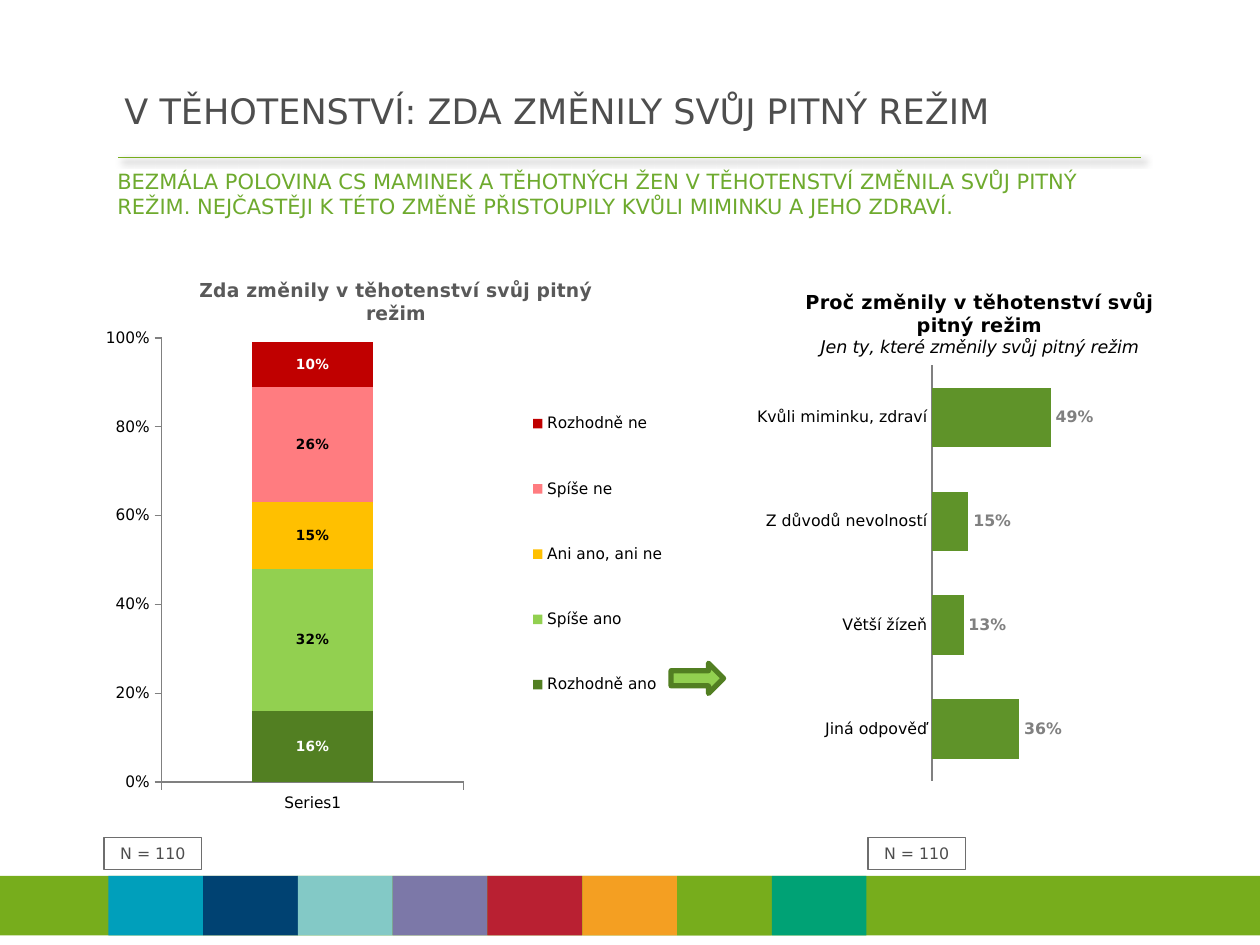
from lxml.etree import SubElement
from pptx import Presentation
from pptx.chart.data import CategoryChartData
from pptx.dml.color import RGBColor
from pptx.enum.chart import XL_CHART_TYPE, XL_LABEL_POSITION, XL_LEGEND_POSITION, XL_TICK_MARK
from pptx.enum.shapes import MSO_CONNECTOR, MSO_SHAPE
from pptx.enum.text import MSO_ANCHOR, PP_ALIGN
from pptx.oxml import parse_xml
from pptx.oxml.ns import nsdecls, qn
from pptx.util import Pt

FACE = "DejaVu Sans"
WHITE = RGBColor(0xFF, 0xFF, 0xFF)
BLACK = RGBColor(0, 0, 0)
INK = RGBColor(0x4E, 0x4E, 0x4E)
FRAME = RGBColor(0x6E, 0x6E, 0x6E)
HEAD = RGBColor(0x59, 0x59, 0x59)
GREY = RGBColor(0x80, 0x80, 0x80)
GREEN = RGBColor(0x77, 0xAD, 0x1C)
LEAF = RGBColor(0x6E, 0xAA, 0x2E)
MOSS = RGBColor(0x5F, 0x93, 0x29)
DARK = RGBColor(0x52, 0x7F, 0x22)
LIME = RGBColor(0x92, 0xD0, 0x50)
GOLD = RGBColor(0xFF, 0xC0, 0x00)
PINK = RGBColor(0xFF, 0x7C, 0x80)
RED = RGBColor(0xC0, 0x00, 0x00)
STRIPES = [
    RGBColor(0x00, 0x9F, 0xBB), RGBColor(0x00, 0x42, 0x72), RGBColor(0x83, 0xC9, 0xC6),
    RGBColor(0x7C, 0x78, 0xA8), RGBColor(0xB9, 0x20, 0x32), RGBColor(0xF4, 0x9F, 0x22),
    GREEN, RGBColor(0x00, 0xA2, 0x75),
]
SHARES = [
    ("Rozhodně ano", 0.16, DARK, WHITE),
    ("Spíše ano", 0.32, LIME, BLACK),
    ("Ani ano, ani ne", 0.15, GOLD, BLACK),
    ("Spíše ne", 0.26, PINK, BLACK),
    ("Rozhodně ne", 0.1, RED, WHITE),
]
CAUSES = {
    "Kvůli miminku, zdraví": 0.49, "Z důvodů nevolností": 0.15,
    "Větší žízeň": 0.13, "Jiná odpověď": 0.36,
}


def apply(item, **values):
    """Set every given value on the item."""
    for name, value in values.items():
        setattr(item, name, value)


def style(font, size, color, **more):
    """Give a font its face, size, colour and further traits."""
    apply(font, name=FACE, size=Pt(size), **more)
    font.color.rgb = color


def points(box):
    """Turn a box of numbers into point lengths."""
    return [Pt(n) for n in box]


def block(slide, kind, box, fill=None, line=None, width=0.75):
    """Add a flat preset shape."""
    shape = slide.shapes.add_shape(kind, *points(box))
    shape.shadow.inherit = False
    for part, color in ((shape.fill, fill), (shape.line.fill, line)):
        if color is None:
            part.background()
        else:
            part.solid()
            part.fore_color.rgb = color
    if line is not None:
        shape.line.width = Pt(width)
    return shape


def words(slide, box, text, size, color, anchor):
    """Add a wrapped text box."""
    frame = slide.shapes.add_textbox(*points(box)).text_frame
    apply(frame, word_wrap=True, vertical_anchor=anchor, text=text)
    style(frame.paragraphs[0].font, size, color)


def header(slide, box):
    """Place the title, the shaded rule and the key message."""
    left, top, width, height = box
    rule = slide.shapes.add_connector(
        MSO_CONNECTOR.STRAIGHT, *points((left + 7.7, top + 45.4, left + 592.3, top + 45.4)))
    rule.line.width = Pt(0.75)
    rule.line.color.rgb = GREEN
    rule._element.spPr.append(parse_xml(
        f'<a:effectLst {nsdecls("a")}><a:outerShdw blurRad="{Pt(4)}" dist="{Pt(3)}" '
        'dir="2700000" rotWithShape="0"><a:srgbClr val="000000"><a:alpha val="40000"/>'
        '</a:srgbClr></a:outerShdw></a:effectLst>'))
    words(slide, (left + 4, top, width - 4, 36.7),
          "V TĚHOTENSTVÍ: ZDA ZMĚNILY SVŮJ PITNÝ REŽIM", 20, INK, MSO_ANCHOR.MIDDLE)
    words(slide, (left, top + 48.3, 601, height - 48.3),
          "BEZMÁLA POLOVINA CS MAMINEK A TĚHOTNÝCH ŽEN V TĚHOTENSTVÍ ZMĚNILA SVŮJ PITNÝ "
          "REŽIM. NEJČASTĚJI K TÉTO ZMĚNĚ PŘISTOUPILY KVŮLI MIMINKU A JEHO ZDRAVÍ.",
          12, LEAF, MSO_ANCHOR.TOP)


def footer(slide, box):
    """Place the green band and its coloured stripes."""
    left, top, width, height = box
    block(slide, MSO_SHAPE.RECTANGLE, box, GREEN)
    step = 54.15
    for i, color in enumerate(STRIPES):
        block(slide, MSO_SHAPE.RECTANGLE, (left + 62 + i * step, top, step, height), color)


def sample(slide, box):
    """Place a framed sample size."""
    shape = block(slide, MSO_SHAPE.RECTANGLE, box, line=FRAME)
    frame = shape.text_frame
    apply(frame, text="N = 110", word_wrap=False, vertical_anchor=MSO_ANCHOR.MIDDLE)
    frame.paragraphs[0].alignment = PP_ALIGN.CENTER
    style(frame.paragraphs[0].font, 9, INK)


def layout(node, index, inner=False, **sides):
    """Give a chart part a fixed place, as shares of the chart."""
    for old in node.findall(qn("c:layout")):
        node.remove(old)
    spot = parse_xml(f'<c:layout {nsdecls("c")}><c:manualLayout/></c:layout>')
    rules = {"layoutTarget": "inner"} if inner else {}
    rules.update(xMode="edge", yMode="edge", **sides)
    for name, value in rules.items():
        SubElement(spot[0], qn("c:" + name)).set("val", str(value))
    node.insert(index, spot)


def graph(slide, box, kind, data, plot, gap):
    """Add a chart with a fixed plot area and plain axes."""
    chart = slide.shapes.add_chart(kind, *points(box), data).chart
    style(chart.font, 9, BLACK)
    apply(chart.plots[0], gap_width=gap, vary_by_categories=False)
    apply(chart.value_axis, has_major_gridlines=False, minimum_scale=0, maximum_scale=1)
    for axis in (chart.category_axis, chart.value_axis):
        style(axis.tick_labels.font, 9, BLACK)
        axis.format.line.color.rgb = GREY
    area = chart._chartSpace.chart.plotArea
    layout(area, 0, True, **dict(zip("xywh", plot)))
    return chart


def label(series, fill, size, color, spot):
    """Colour a series and show its values."""
    series.format.fill.solid()
    series.format.fill.fore_color.rgb = fill
    labels = series.data_labels
    apply(labels, show_value=True, number_format="0%", number_format_is_linked=False,
          position=spot)
    style(labels.font, size, color, bold=True)


def change(slide, box):
    """Place the stacked column on whether habits changed."""
    data = CategoryChartData(number_format="0%")
    data.categories = ["Series1"]
    for name, value, *_ in SHARES:
        data.add_series(name, [value])
    chart = graph(slide, box, XL_CHART_TYPE.COLUMN_STACKED, data,
                  (0.07, 0.12, 0.53, 0.75), 150)
    chart.plots[0].overlap = 100
    for series, (_, _, fill, color) in zip(chart.plots[0].series, SHARES):
        label(series, fill, 8, color, XL_LABEL_POSITION.CENTER)
    for axis in (chart.category_axis, chart.value_axis):
        axis.major_tick_mark = XL_TICK_MARK.OUTSIDE
    chart.value_axis.major_unit = 0.2
    apply(chart.value_axis.tick_labels, number_format="0%", number_format_is_linked=False)
    title = chart.chart_title
    title.text_frame.text = "Zda změnily v těhotenství svůj pitný režim"
    style(title.text_frame.paragraphs[0].runs[0].font, 11, HEAD, bold=True)
    layout(title._element, 1, x=0.13, y=0.01)
    chart.has_legend = True
    legend = chart.legend
    apply(legend, position=XL_LEGEND_POSITION.RIGHT, include_in_layout=False)
    style(legend.font, 9, BLACK)
    layout(legend._element, 1, x=0.69, y=0.17, w=0.29, h=0.63)


def reason(slide, box):
    """Place the bars on why habits changed."""
    data = CategoryChartData(number_format="0%")
    data.categories = list(CAUSES)
    data.add_series("Series 1", list(CAUSES.values()))
    chart = graph(slide, box, XL_CHART_TYPE.BAR_CLUSTERED, data,
                  (0.4, 0.18, 0.51, 0.76), 75)
    chart.has_legend = False
    label(chart.plots[0].series[0], MOSS, 9, GREY, XL_LABEL_POSITION.OUTSIDE_END)
    apply(chart.category_axis, reverse_order=True, major_tick_mark=XL_TICK_MARK.NONE)
    chart.value_axis.visible = False
    frame = chart.chart_title.text_frame
    frame.text = ("Proč změnily v těhotenství svůj pitný režim\n"
                  "Jen ty, které změnily svůj pitný režim")
    main, note = frame.paragraphs
    style(main.runs[0].font, 11, BLACK, bold=True)
    style(note.runs[0].font, 10, BLACK, bold=False, italic=True)


def build():
    """Build and save the slide."""
    deck = Presentation()
    apply(deck, slide_width=Pt(720), slide_height=Pt(540))
    slide = deck.slides.add_slide(deck.slide_layouts[6])
    footer(slide, (0, 500.5, 720, 34))
    header(slide, (60, 44.6, 643, 88))
    for left in (59.5, 496):
        sample(slide, (left, 478.7, 55.6, 18.2))
    reason(slide, (424, 152.6, 271.5, 312.5))
    block(slide, MSO_SHAPE.RIGHT_ARROW, (383.5, 379, 30, 17.3), LIME, DARK, 3)
    change(slide, (60.5, 152.6, 334.8, 338.4))
    deck.save("out.pptx")


if __name__ == "__main__":
    build()
